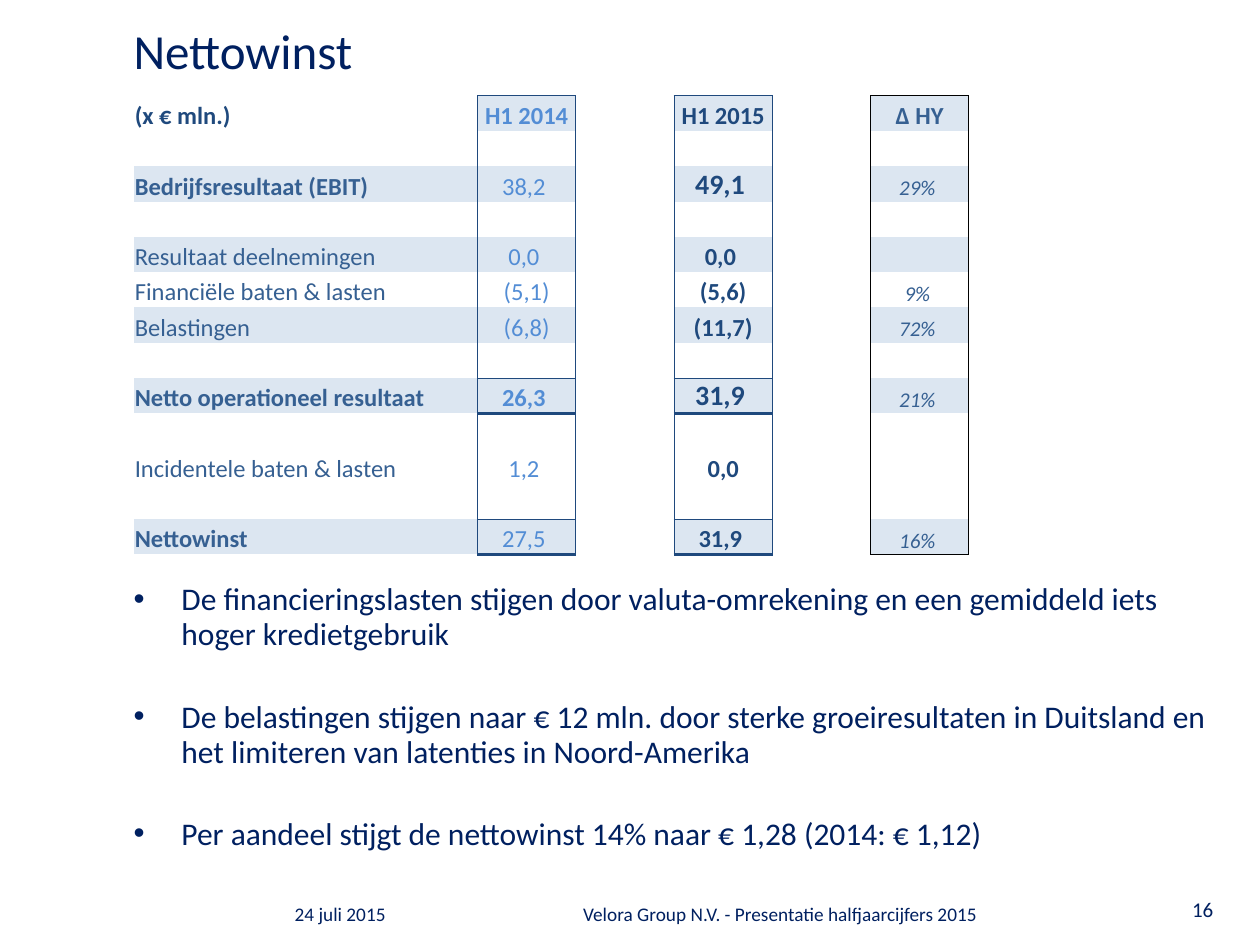
from lxml.etree import SubElement
from pptx import Presentation
from pptx.dml.color import RGBColor
from pptx.enum.text import MSO_ANCHOR, MSO_AUTO_SIZE, PP_ALIGN
from pptx.oxml.ns import qn
from pptx.util import Inches, Pt

COLORS = {
    "navy": "002060", "blue": "1F497D", "label": "366092", "light": "538DD5",
    "band": "DCE6F1", "white": "FFFFFF", "black": "000000",
}
NO_STYLE_NO_GRID = "{2D5ABB26-0587-4C30-8999-92F81FD0307C}"

# label, H1 2014, H1 2015, change
RESULTS = [
    ("(x € mln.)", "H1 2014", "H1 2015", "∆ HY"),
    None,
    ("Bedrijfsresultaat (EBIT)", "38,2 ", "49,1 ", "29% "),
    None,
    ("Resultaat deelnemingen", "0,0 ", "0,0 ", ""),
    ("Financiële baten & lasten", "(5,1)", "(5,6)", "9% "),
    ("Belastingen", "(6,8)", "(11,7)", "72% "),
    None,
    ("Netto operationeel resultaat", "26,3 ", "31,9 ", "21% "),
    None,
    ("Incidentele baten & lasten", "1,2 ", "0,0", ""),
    None,
    ("Nettowinst", "27,5 ", "31,9 ", "16% "),
]
HEADER, EBIT, OPERATING, NET = 0, 2, 8, 12
BANDED = {EBIT, 4, 6, OPERATING, NET}
TOTALS = {OPERATING, NET}
LABEL, PRIOR, CURRENT, CHANGE = 0, 1, 3, 5
COLUMN_WIDTHS = [2.73] + [0.78] * 5
ROW_HEIGHT = 0.28

CONCLUSIONS = [
    "De financieringslasten stijgen door valuta-omrekening en een gemiddeld iets "
    "hoger kredietgebruik",
    "De belastingen stijgen naar € 12 mln. door sterke groeiresultaten in Duitsland "
    "en het limiteren van latenties in Noord-Amerika",
    "Per aandeel stijgt de nettowinst 14% naar € 1,28 (2014: € 1,12)",
]


def cell_style(row, column):
    """Return size, colour, bold and italic for a cell."""
    if column == LABEL:
        color = "blue" if row == HEADER else "label"
        return 14, color, row in TOTALS | {HEADER, EBIT}, False
    if column == PRIOR:
        return 14, "light", row in (HEADER, OPERATING), False
    if column == CURRENT:
        return 16 if row in (EBIT, OPERATING) else 14, "blue", True, False
    if row == HEADER:
        return 14, "label", True, False
    return 12, "label", False, True


def cell_borders(row, column):
    """Return the width of each drawn side, in the order the schema asks for."""
    if column not in (PRIOR, CURRENT, CHANGE):
        return {}
    borders = {"L": 0.5, "R": 0.5}
    is_period = column != CHANGE
    if row == HEADER or (is_period and row in TOTALS):
        borders["T"] = 0.5
    if is_period and row in TOTALS:
        borders["B"] = 2
    elif row == NET:
        borders["B"] = 0.5
    return borders


class SlideBuilder:
    font_name = "Calibri"

    def __init__(self, slide):
        self.slide = slide

    def set_font(self, paragraph, size, color="navy", bold=False, italic=False):
        font = paragraph.font
        font.name, font.size = self.font_name, Pt(size)
        font.bold, font.italic = bold, italic
        font.color.rgb = RGBColor.from_string(COLORS[color])

    def place(self, placeholder, left, top, width, height):
        placeholder.left, placeholder.top = Inches(left), Inches(top)
        placeholder.width, placeholder.height = Inches(width), Inches(height)
        frame = placeholder.text_frame
        frame.margin_left = frame.margin_right = 0
        frame.margin_top = frame.margin_bottom = 0
        frame.vertical_anchor = MSO_ANCHOR.TOP
        frame.auto_size = MSO_AUTO_SIZE.NONE
        return frame

    def title(self, text, *box):
        frame = self.place(self.slide.shapes.title, *box)
        frame.text = text
        heading = frame.paragraphs[0]
        heading.alignment = PP_ALIGN.LEFT
        heading.line_spacing = Pt(30)
        self.set_font(heading, 28)

    def bullets(self, items, *box):
        frame = self.place(self.slide.placeholders[1], *box)
        for index, item in enumerate(items):
            point = frame.paragraphs[0] if index == 0 else frame.add_paragraph()
            point.text = item
            point.line_spacing = Pt(20)
            point.space_before = Pt(27 if index else 0)
            properties = point._p.get_or_add_pPr()
            properties.set("marL", str(Inches(0.38)))
            properties.set("indent", str(-Inches(0.38)))
            SubElement(properties, qn("a:buChar"), char="•")
            self.set_font(point, 18)

    def text(self, text, left, top, width, height, size, align=PP_ALIGN.LEFT):
        box = self.slide.shapes.add_textbox(
            Inches(left), Inches(top), Inches(width), Inches(height))
        box.text_frame.word_wrap = True
        line = box.text_frame.paragraphs[0]
        line.text, line.alignment = text, align
        self.set_font(line, size)

    def border(self, cell, side, width, color):
        line = SubElement(cell._tc.get_or_add_tcPr(), qn(f"a:ln{side}"), w=str(Pt(width)))
        fill = SubElement(line, qn("a:solidFill"))
        SubElement(fill, qn("a:srgbClr"), val=COLORS[color])

    def cell(self, cell, text, row, column):
        cell.margin_left = cell.margin_right = cell.margin_top = Inches(0.01)
        cell.margin_bottom = 0
        cell.vertical_anchor = MSO_ANCHOR.BOTTOM
        entry = cell.text_frame.paragraphs[0]
        if text:
            entry.text = text
        entry.alignment = PP_ALIGN.LEFT if column == LABEL else PP_ALIGN.CENTER
        self.set_font(entry, *cell_style(row, column))

        line_color = "black" if column == CHANGE else "blue"
        for side, width in cell_borders(row, column).items():
            self.border(cell, side, width, line_color)

        framed = column in (PRIOR, CURRENT, CHANGE)
        shaded = (row in BANDED and (framed or column == LABEL)) or (row == HEADER and framed)
        cell.fill.solid()
        cell.fill.fore_color.rgb = RGBColor.from_string(COLORS["band" if shaded else "white"])

    def results_table(self, results, left, top):
        table = self.slide.shapes.add_table(
            len(results), len(COLUMN_WIDTHS), Inches(left), Inches(top),
            Inches(sum(COLUMN_WIDTHS)), Inches(ROW_HEIGHT * len(results))).table
        table.first_row = table.horz_banding = False
        table._tbl.tblPr.find(qn("a:tableStyleId")).text = NO_STYLE_NO_GRID
        for column, width in zip(table.columns, COLUMN_WIDTHS):
            column.width = Inches(width)
        for row, result in enumerate(results):
            table.rows[row].height = Inches(ROW_HEIGHT)
            entries = dict(zip((LABEL, PRIOR, CURRENT, CHANGE), result or ()))
            for column in range(len(COLUMN_WIDTHS)):
                self.cell(table.cell(row, column), entries.get(column, ""), row, column)


def main():
    presentation = Presentation()
    presentation.slide_width, presentation.slide_height = Inches(10), Inches(7.5)
    builder = SlideBuilder(presentation.slides.add_slide(presentation.slide_layouts[1]))
    builder.title("Nettowinst", 1.06, 0.21, 3.94, 0.94)
    builder.bullets(CONCLUSIONS, 1.06, 4.62, 8.66, 2.36)
    builder.text("24 juli 2015", 2.24, 7.11, 1.69, 0.33, 11)
    builder.text("Velora Group N.V. - Presentatie halfjaarcijfers 2015",
                 4.53, 7.11, 4.57, 0.33, 11)
    builder.text("16", 9.17, 7.07, 0.75, 0.37, 12, PP_ALIGN.CENTER)
    builder.results_table(RESULTS, 1.06, 0.76)
    presentation.save("out.pptx")


if __name__ == "__main__":
    main()
